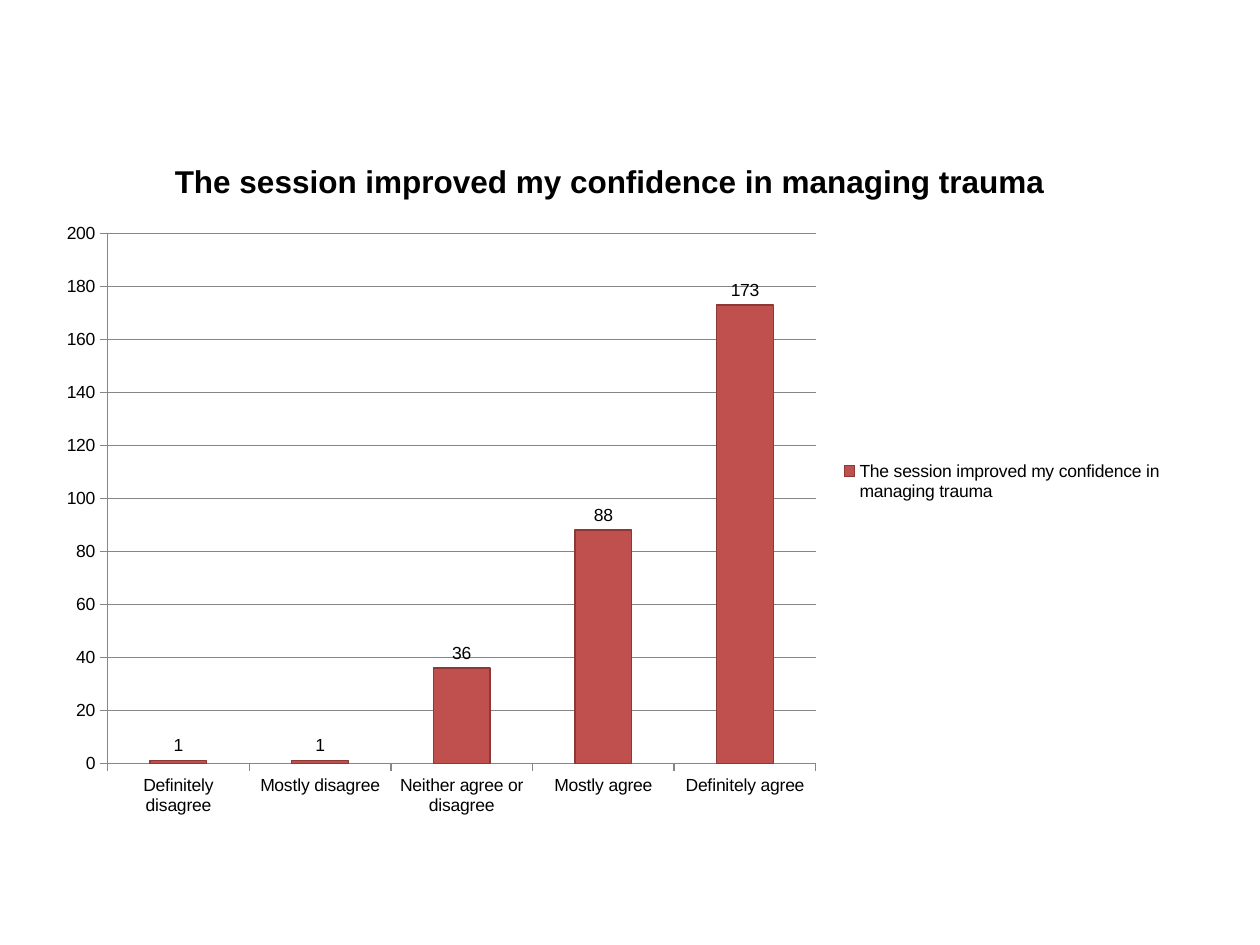
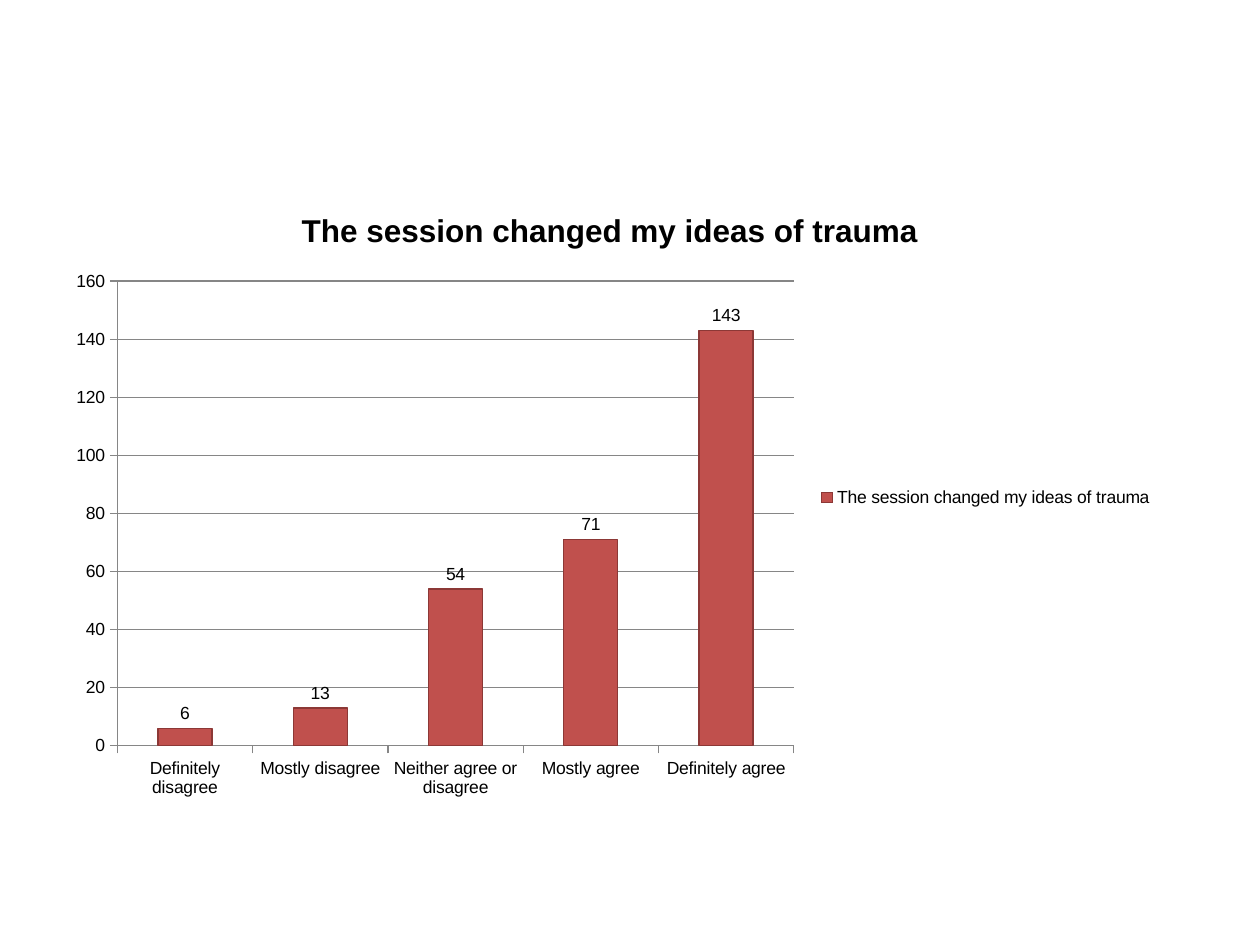
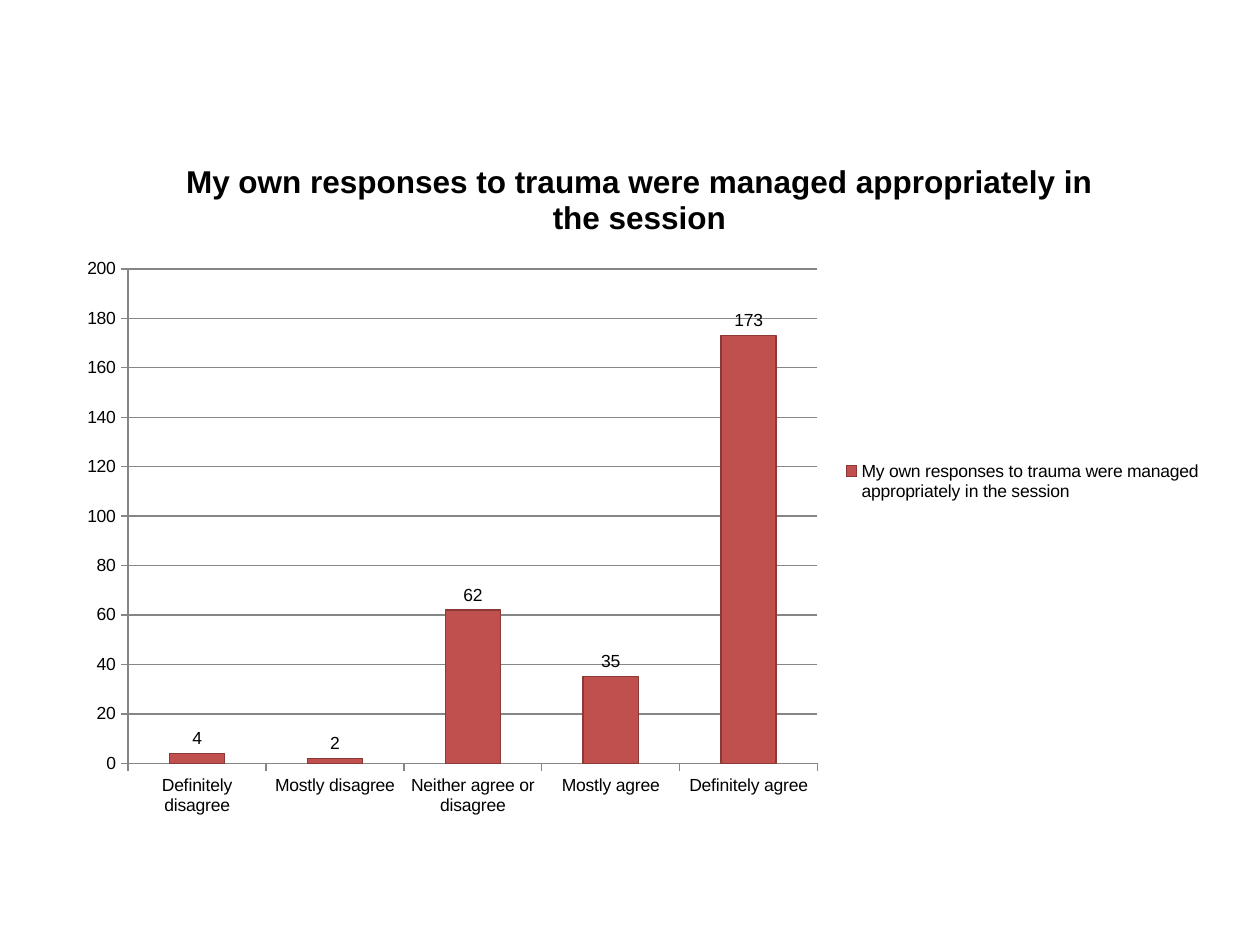
from pptx import Presentation
from pptx.chart.data import CategoryChartData
from pptx.dml.color import RGBColor
from pptx.enum import chart as chart_enum
from pptx.util import Inches, Pt

# Shared style
FONT = "Arial"
BLACK = "000000"
BAR_FILL = "C0504D"
BAR_LINE = "8C3836"
GRID = "868686"

ANSWERS = ["Definitely disagree", "Mostly disagree", "Neither agree or disagree",
           "Mostly agree", "Definitely agree"]

# Statement, answer counts, chart box (left, top, width, height), axis maximum
SURVEY = [
    ("The session improved my confidence in managing trauma",
     (1, 1, 36, 88, 173), (0.35, 1.07, 8.98, 5.51), 200),
    ("The session changed my ideas of trauma",
     (6, 13, 54, 71, 143), (0.43, 1.47, 8.82, 4.96), 160),
    ("My own responses to trauma were managed appropriately in the session",
     (4, 2, 62, 35, 173), (0.51, 1.07, 9.13, 5.51), 200),
]


def color(hex_string):
    return RGBColor.from_string(hex_string)


def style_line(line, hex_string):
    line.color.rgb = color(hex_string)
    line.width = Pt(0.75)


presentation = Presentation()
presentation.slide_width = Inches(10)
presentation.slide_height = Inches(7.5)

for statement, counts, box, maximum in SURVEY:
    slide = presentation.slides.add_slide(presentation.slide_layouts[6])

    # Chart with its values
    data = CategoryChartData(number_format="General")
    data.categories = ANSWERS
    data.add_series(statement, counts)
    chart = slide.shapes.add_chart(chart_enum.XL_CHART_TYPE.COLUMN_CLUSTERED,
                                   *map(Inches, box), data).chart
    chart.font.name = FONT
    chart.font.size = Pt(10)
    chart.font.color.rgb = color(BLACK)

    # Title
    chart.has_title = True
    chart.chart_title.include_in_layout = False
    title = chart.chart_title.text_frame.paragraphs[0]
    title.text = statement
    title.font.name = FONT
    title.font.size = Pt(18)
    title.font.bold = True
    title.font.color.rgb = color(BLACK)

    # Legend
    chart.has_legend = True
    chart.legend.position = chart_enum.XL_LEGEND_POSITION.RIGHT
    chart.legend.include_in_layout = False

    # Axes and gridlines
    for axis in (chart.category_axis, chart.value_axis):
        axis.major_tick_mark = chart_enum.XL_TICK_MARK.OUTSIDE
        axis.minor_tick_mark = chart_enum.XL_TICK_MARK.NONE
        style_line(axis.format.line, GRID)
    value_axis = chart.value_axis
    value_axis.minimum_scale = 0
    value_axis.maximum_scale = maximum
    value_axis.major_unit = 20
    value_axis.has_major_gridlines = True
    style_line(value_axis.major_gridlines.format.line, GRID)

    # Bars and their labels
    plot = chart.plots[0]
    plot.gap_width = 150
    plot.vary_by_categories = False
    bars = plot.series[0]
    bars.format.fill.solid()
    bars.format.fill.fore_color.rgb = color(BAR_FILL)
    style_line(bars.format.line, BAR_LINE)
    bars.data_labels.show_value = True
    bars.data_labels.position = chart_enum.XL_LABEL_POSITION.OUTSIDE_END

presentation.save("out.pptx")
